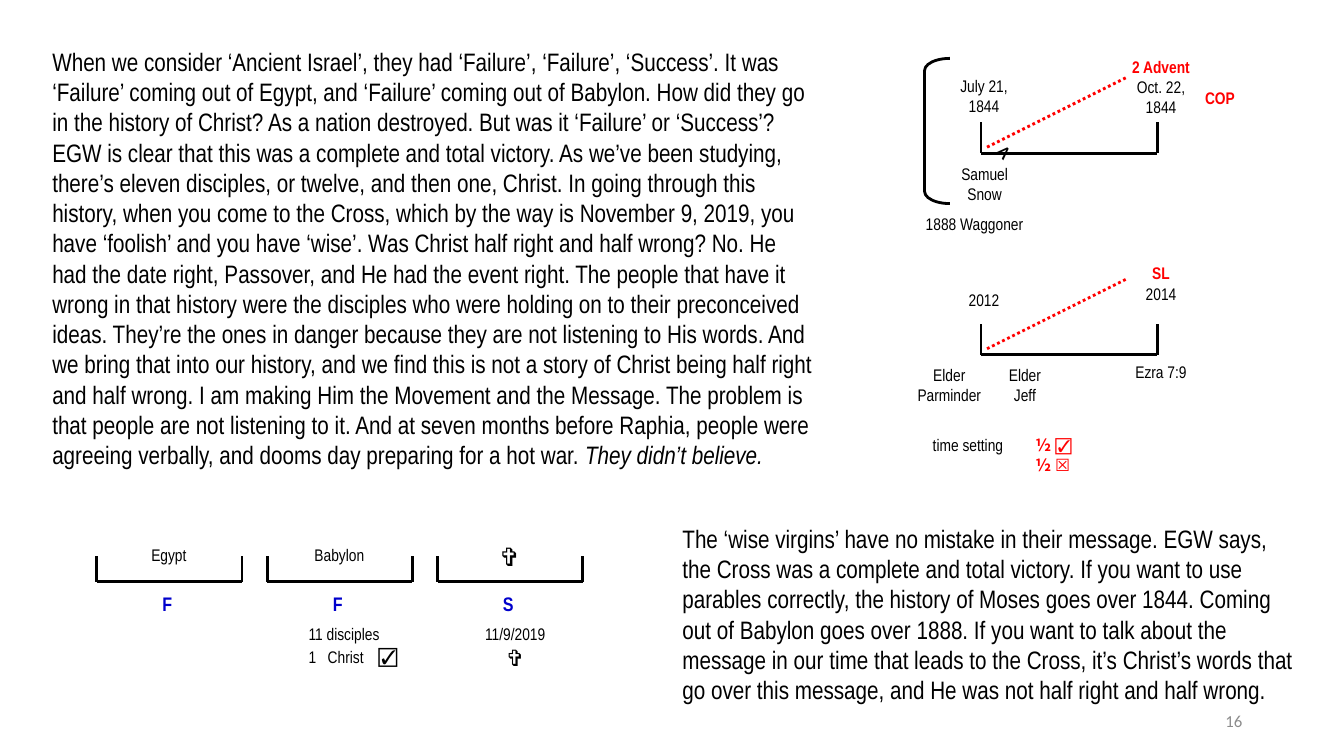
from dataclasses import dataclass

import pptx
import pptx.dml.color
import pptx.enum.dml
import pptx.enum.shapes
import pptx.enum.text
import pptx.oxml
import pptx.oxml.ns
import pptx.slide
import pptx.text.text
import pptx.util

Inches = pptx.util.Inches
RGBColor = pptx.dml.color.RGBColor
Align = pptx.enum.text.PP_ALIGN
Anchor = pptx.enum.text.MSO_ANCHOR

BLACK = RGBColor(0x00, 0x00, 0x00)
RED = RGBColor(0xFF, 0x00, 0x00)
BLUE = RGBColor(0x00, 0x00, 0xCC)
GREY = RGBColor(0x8C, 0x8C, 0x8C)

NARROW = "Arial Narrow"
HALF_FONT = "Noto Sans CJK JP"
LABEL_INSETS = (0.04, 0.04)
BODY_INSETS = (0.1, 0.05)

ISRAEL = (
    "When we consider ‘Ancient Israel’, they had ‘Failure’, ‘Failure’, ‘Success’. It was "
    "‘Failure’ coming out of Egypt, and ‘Failure’ coming out of Babylon. How did they go "
    "in the history of Christ? As a nation destroyed. But was it ‘Failure’ or ‘Success’? "
    "EGW is clear that this was a complete and total victory. As we’ve been studying, "
    "there’s eleven disciples, or twelve, and then one, Christ. In going through this "
    "history, when you come to the Cross, which by the way is November 9, 2019, you "
    "have ‘foolish’ and you have ‘wise’. "
)
HALF_RIGHT = (
    "Was Christ half right and half wrong? No. He "
    "had the date right, Passover, and He had the event right. The people that have it "
    "wrong in that history were the disciples who were holding on to their preconceived "
    "ideas. They’re the ones in danger because they are not listening to His words. And "
    "we bring that into our history, and we find this is not a story of Christ being half right "
    "and half wrong. I am making Him the Movement and the Message. The problem is "
    "that people are not listening to it. And at seven months before Raphia, people were "
    "agreeing verbally, and dooms day preparing for a hot war. "
)
VIRGINS = (
    "The ‘wise virgins’ have no mistake in their message. EGW says, "
    "the Cross was a complete and total victory. If you want to use "
    "parables correctly, the history of Moses goes over 1844. Coming "
    "out of Babylon goes over 1888. If you want to talk about the "
    "message in our time that leads to the Cross, it’s Christ’s words that "
    "go over this message, and He was not half right and half wrong."
)


@dataclass(frozen=True)
class Run:
    text: str
    size: float = 12
    font: str = NARROW
    color: RGBColor = BLACK
    bold: bool = False
    italic: bool = False


@dataclass(frozen=True)
class Label:
    left: float
    top: float
    width: float
    height: float
    lines: list[list[Run]]
    align: Align = Align.CENTER


@dataclass(frozen=True)
class Era:
    name: Run
    name_top: float
    verdict: str


def add_text(s: pptx.slide.Slide, label: Label, *, insets: tuple[float, float] = LABEL_INSETS,
             anchor: Anchor = Anchor.TOP, rotation: float = 0, tabs: tuple[float, ...] = ()) -> None:
    """Draw a label; tabs are tab stops in inches for every paragraph."""
    sp = s.shapes.add_textbox(*map(Inches, (label.left, label.top, label.width, label.height)))
    sp.rotation = rotation
    tf = sp.text_frame
    tf.word_wrap = True
    tf.vertical_anchor = anchor
    tf.margin_left = tf.margin_right = Inches(insets[0])
    tf.margin_top = tf.margin_bottom = Inches(insets[1])
    for i, line in enumerate(label.lines):
        p = tf.paragraphs[0] if i == 0 else tf.add_paragraph()
        p.alignment = label.align
        if tabs:
            set_tabs(p, tabs)
        for run in line:
            r = p.add_run()
            r.text = run.text
            r.font.size = pptx.util.Pt(run.size)
            r.font.name = run.font
            r.font.bold = run.bold
            r.font.italic = run.italic
            r.font.color.rgb = run.color


def set_tabs(p: pptx.text.text._Paragraph, stops: tuple[float, ...]) -> None:
    qn = pptx.oxml.ns.qn
    tab_list = pptx.oxml.parse_xml(f"<a:tabLst {pptx.oxml.ns.nsdecls('a')}/>")
    for stop in stops:
        tab = tab_list.makeelement(qn("a:tab"), {"pos": str(Inches(stop)), "algn": "l"})
        tab_list.append(tab)
    p._p.get_or_add_pPr().append(tab_list)


def add_line(s: pptx.slide.Slide, x1: float, y1: float, x2: float, y2: float,
             color: RGBColor = BLACK, dotted: bool = False) -> None:
    cx = s.shapes.add_connector(pptx.enum.shapes.MSO_CONNECTOR.STRAIGHT,
                                *map(Inches, (x1, y1, x2, y2)))
    cx.line.color.rgb = color
    cx.line.width = pptx.util.Pt(2)
    if dotted:
        cx.line.dash_style = pptx.enum.dml.MSO_LINE.ROUND_DOT
    effects = pptx.oxml.parse_xml(f"<a:effectLst {pptx.oxml.ns.nsdecls('a')}/>")
    cx._element.spPr.append(effects)


def add_span(s: pptx.slide.Slide, left: float, base: float, width: float, tick: float) -> None:
    """Draw a base line with an upright tick at each end."""
    right = left + width
    add_line(s, left, base, right, base)
    for x in (left, right):
        add_line(s, x, base, x, base - tick)


def add_history(s: pptx.slide.Slide, base: float) -> None:
    """Draw a span with its dotted rise."""
    add_span(s, 9.73, base, 1.75, 0.31)
    add_line(s, 9.79, base - 0.06, 11.17, base - 0.75, RED, dotted=True)


def add_eras(s: pptx.slide.Slide) -> None:
    eras = [
        Era(Run("Egypt"), 5.36, "F"),
        Era(Run("Babylon"), 5.36, "F"),
        Era(Run("✞", 18, "Arial"), 5.33, "S"),
    ]
    for i, era in enumerate(eras):
        left = 0.96 + 1.69 * i
        add_span(s, left, 5.77, 1.44, 0.25)
        add_text(s, Label(left + 0.34, era.name_top, 0.75, 0.34, [[era.name]]))
        verdict = Run(era.verdict, 14, color=BLUE, bold=True)
        add_text(s, Label(left + 0.56, 5.83, 0.28, 0.25, [[verdict]]))


def add_waggoner_bracket(s: pptx.slide.Slide) -> None:
    sp = s.shapes.add_shape(pptx.enum.shapes.MSO_SHAPE.LEFT_BRACKET,
                            *map(Inches, (9.17, 0.58, 0.25, 1.44)))
    sp.adjustments[0] = 0.48
    sp.shadow.inherit = False
    sp.fill.background()
    sp.line.color.rgb = BLACK
    sp.line.width = pptx.util.Pt(2)


def main() -> None:
    prs = pptx.Presentation()
    prs.slide_width, prs.slide_height = Inches(13.33), Inches(7.5)
    s = prs.slides.add_slide(prs.slide_layouts[6])

    page_number = Run("16", 12, "Calibri", GREY)
    add_text(s, Label(9.42, 6.95, 3, 0.4, [[page_number]], Align.RIGHT),
             insets=BODY_INSETS, anchor=Anchor.MIDDLE)
    israel = [Run(ISRAEL, 18), Run(HALF_RIGHT, 18), Run("They didn’t believe.", 18, italic=True)]
    add_text(s, Label(0.42, 0.41, 7.78, 4.34, [israel], Align.LEFT), insets=BODY_INSETS)
    add_text(s, Label(6.67, 5.14, 6.34, 1.92, [[Run(VIRGINS, 18)]], Align.LEFT),
             insets=BODY_INSETS)

    for base in (1.52, 3.52):
        add_history(s, base)
    add_waggoner_bracket(s)
    add_eras(s)

    half = Run("½ ", 12, HALF_FONT, RED, bold=True)
    labels = [
        Label(9.48, 0.71, 0.56, 0.5, [[Run("July 21, 1844")]]),
        Label(9.42, 1.58, 0.69, 0.5, [[Run("Samuel Snow")]]),
        Label(11.17, 0.52, 0.69, 0.69,
              [[Run("2 Advent", color=RED, bold=True)], [Run("Oct. 22, 1844")]]),
        Label(11.85, 0.83, 0.5, 0.38, [[Run("COP", color=RED, bold=True)]]),
        Label(9.04, 2.08, 1.25, 0.31, [[Run("1888 Waggoner")]]),
        Label(9.48, 2.83, 0.56, 0.38, [[Run("2012")]]),
        Label(11.17, 2.57, 0.69, 0.64, [[Run("SL", color=RED, bold=True)], [Run("2014")]]),
        Label(9.04, 3.58, 0.75, 0.62, [[Run("Elder")], [Run("Parminder")]]),
        Label(9.79, 3.58, 0.75, 0.62, [[Run("Elder")], [Run("Jeff")]]),
        Label(11.14, 3.55, 0.75, 0.31, [[Run("Ezra 7:9")]]),
        Label(9.04, 4.27, 1.12, 0.31, [[Run("time setting")]]),
        Label(10.23, 4.27, 0.56, 0.75,
              [[half, Run(box, 12, "Arial", RED)] for box in "☑☒"], Align.LEFT),
        Label(4.58, 6.15, 1.06, 0.62, [[Run("11/9/2019")], [Run("✞", 16, "Arial")]]),
    ]
    for label in labels:
        add_text(s, label)

    disciples = [[Run("11 disciples")], [Run("1\tChrist\t"), Run("☑", 14, "Arial")]]
    add_text(s, Label(3.02, 6.15, 1.31, 0.62, disciples, Align.LEFT), tabs=(0.19, 0.69))
    add_text(s, Label(9.77, 1.37, 0.3, 0.36, [[Run("v", 18, "Calibri")]]), rotation=225)

    prs.save("out.pptx")


if __name__ == "__main__":
    main()
